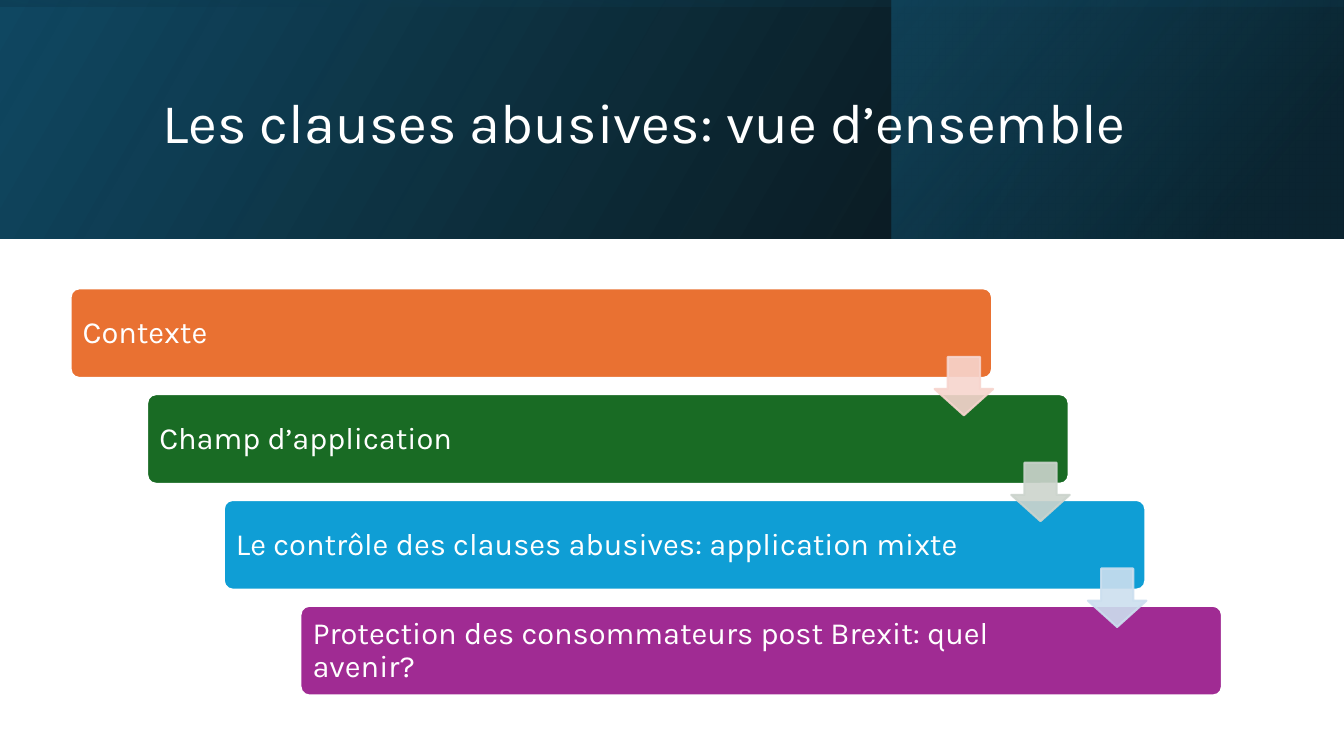
from lxml import etree
from pptx import Presentation
from pptx.dml.color import RGBColor
from pptx.enum.shapes import MSO_SHAPE
from pptx.enum.text import MSO_ANCHOR
from pptx.oxml.ns import qn
from pptx.util import Inches, Pt

RECT, ROUND, DOWN = MSO_SHAPE.RECTANGLE, MSO_SHAPE.ROUNDED_RECTANGLE, MSO_SHAPE.DOWN_ARROW
MIDDLE = MSO_ANCHOR.MIDDLE

# Content
TITLE = "Les clauses abusives: vue d’ensemble"
STEPS = [
    ("Contexte", "E97132"),
    ("Champ d’application", "196B24"),
    ("Le contrôle des clauses abusives: application mixte", "0F9ED5"),
    ("Protection des consommateurs post Brexit: quel avenir?", "A02B93"),
]
ARROWS = ["F7D5CE", "CCD4CD", "CCDFEF"]
# Banner layers: box, rotation, angle, stops (position, colour, opacity in %)
LAYERS = [
    ((0, 0, 13.33, 2.37), 0, 330, [(0, "000000", 96), (100, "104862", 100)]),
    ((8.84, 0, 4.48, 2.37), 0, 320, [(19, "0B3041", 68), (100, "156082", 48)]),
    ((5.48, -5.48, 2.37, 13.33), 270, 350, [(23, "104862", 16), (99, "000000", 45)]),
]
LAYERS[0][3][1] = (100, "104862", 100)

# Staircase geometry in inches
LEFT, TOP = 0.7, 2.86
DX, DY = 0.76, 1.05
BAR_W, BAR_H = 9.14, 0.89
ARROW = 0.58


def rgb(code):
    return RGBColor.from_string(code)


def inches(box):
    return [Inches(v) for v in box]


def add_form(kind, box, color=None, edge=None, adjust=()):
    form = slide.shapes.add_shape(kind, *inches(box))
    form.shadow.inherit = False
    for i, value in enumerate(adjust):
        form.adjustments[i] = value
    if color:
        form.fill.solid()
        form.fill.fore_color.rgb = rgb(color)
    if edge:
        form.line.color.rgb = rgb(edge)
        form.line.width = Pt(1.5)
    else:
        form.line.fill.background()
    return form


def fade(form, levels):
    """Give each colour of the form its opacity in percent."""
    for node, level in zip(form.element.iter(qn("a:srgbClr")), levels):
        etree.SubElement(node, qn("a:alpha")).set("val", str(level * 1000))


def write(holder, text, size, inset=None):
    frame = holder.text_frame
    frame.word_wrap = True
    frame.vertical_anchor = MIDDLE
    if inset is not None:
        frame.margin_left = frame.margin_right = Inches(inset)
        frame.margin_top = frame.margin_bottom = Inches(inset)
    para = frame.paragraphs[0]
    para.line_spacing = 0.9
    run = para.add_run()
    run.text = text
    run.font.size = Pt(size)
    run.font.name = "Karla"
    run.font.color.rgb = rgb("FFFFFF")


deck = Presentation()
deck.slide_width, deck.slide_height = Inches(13.33), Inches(7.5)
slide = deck.slides.add_slide(deck.slide_layouts[5])

# Banner
for box, turn, angle, stops in LAYERS:
    layer = add_form(RECT, box)
    layer.rotation = turn
    layer.element.spPr.find(qn("a:xfrm")).set("flipH", "1")
    layer.fill.gradient()
    layer.fill.gradient_angle = 360 - angle
    for stop, (place, color, level) in zip(layer.fill.gradient_stops, stops):
        stop.position = place / 100
        stop.color.rgb = rgb(color)
    fade(layer, [level for place, color, level in stops])

# Title, brought in front of the banner
title = slide.shapes.title
title.left, title.top, title.width, title.height = inches((1.51, 0.38, 10.63, 1.72))
write(title, TITLE, 40)
title.text_frame.paragraphs[0].alignment = 1
slide.shapes.element.append(title.element)

# Bars
for i, (text, color) in enumerate(STEPS):
    x, y = LEFT + i * DX, TOP + i * DY
    add_form(ROUND, (x, y, BAR_W, BAR_H), color, "FFFFFF", [0.1])
    width = 7.75 if i else 8.11
    label = slide.shapes.add_textbox(*inches((x + 0.03, y + 0.03, width, 0.84)))
    write(label, text, 22, inset=0.09)

# Arrows between the bars
for i, color in enumerate(ARROWS):
    box = (9.27 + i * DX, 3.54 + i * DY, ARROW, ARROW)
    arrow = add_form(DOWN, box, color, color, [0.55, 0.45])
    # adjustments run as (head length, shaft width)
    arrow.adjustments[0], arrow.adjustments[1] = 0.55, 0.45
    fade(arrow, [90, 90])

deck.save("out.pptx")
